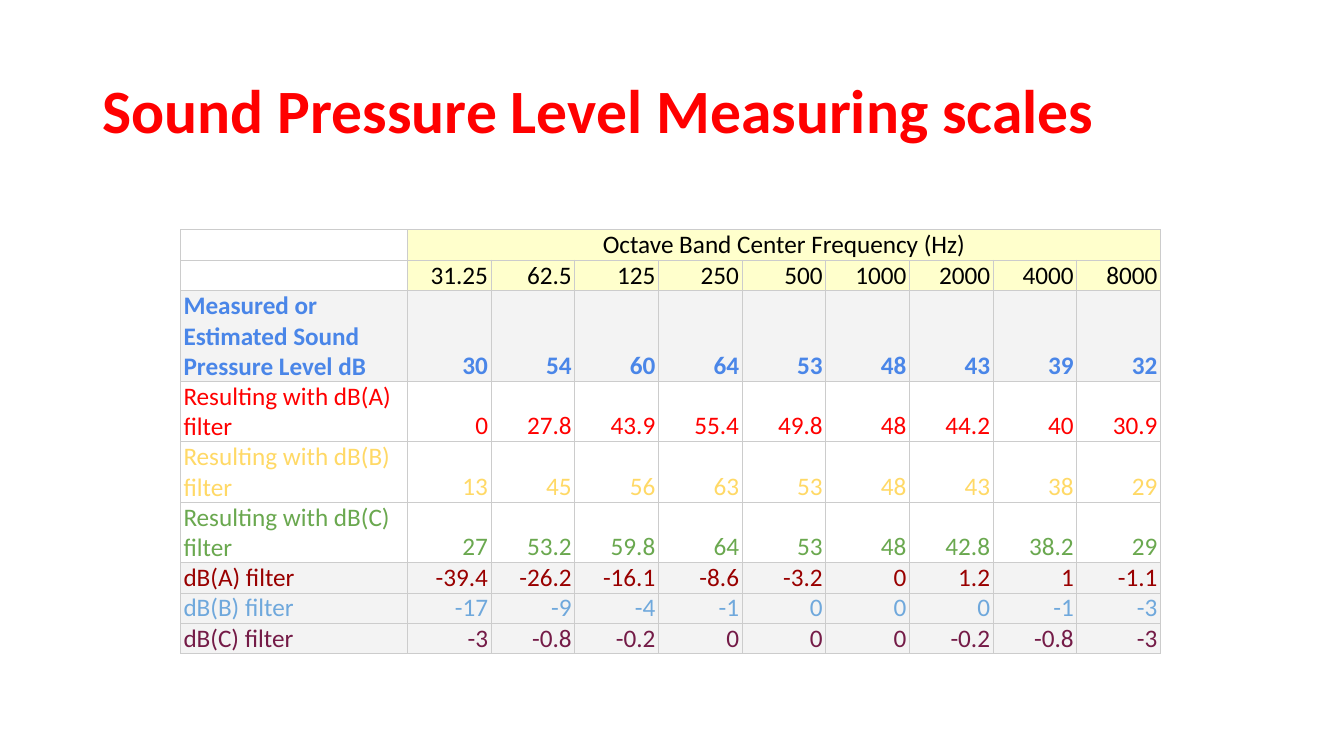
from lxml import etree
from pptx import Presentation
from pptx.dml.color import RGBColor
from pptx.enum.text import MSO_ANCHOR, PP_ALIGN
from pptx.oxml.ns import qn
from pptx.util import Inches, Pt

LEFT, CENTER, RIGHT = PP_ALIGN.LEFT, PP_ALIGN.CENTER, PP_ALIGN.RIGHT
MIDDLE, BOTTOM = MSO_ANCHOR.MIDDLE, MSO_ANCHOR.BOTTOM

COLORS = {
    "black": "000000", "red": "FF0000", "blue": "4A86E8", "yellow": "FFD966",
    "green": "6AA84F", "dark red": "990000", "light blue": "6FA8DC",
    "plum": "741B47", "cream": "FFFFCC", "gray": "F3F3F3", "border": "CCCCCC",
}
LABEL_WIDTH, BAND_WIDTH, LINE_HEIGHT = 2.25, 0.83, 0.3

# label, values, text color, fill, bold, lines of text
ROWS = [
    ("", "Octave Band Center Frequency (Hz)", "black", "cream", False, 1),
    ("", "31.25 62.5 125 250 500 1000 2000 4000 8000", "black", "cream", False, 1),
    ("Measured or Estimated Sound Pressure Level dB",
     "30 54 60 64 53 48 43 39 32", "blue", "gray", True, 3),
    ("Resulting with dB(A) filter",
     "0 27.8 43.9 55.4 49.8 48 44.2 40 30.9", "red", None, False, 2),
    ("Resulting with dB(B) filter",
     "13 45 56 63 53 48 43 38 29", "yellow", None, False, 2),
    ("Resulting with dB(C) filter",
     "27 53.2 59.8 64 53 48 42.8 38.2 29", "green", None, False, 2),
    ("dB(A) filter", "-39.4 -26.2 -16.1 -8.6 -3.2 0 1.2 1 -1.1",
     "dark red", "gray", False, 1),
    ("dB(B) filter", "-17 -9 -4 -1 0 0 0 -1 -3", "light blue", "gray", False, 1),
    ("dB(C) filter", "-3 -0.8 -0.2 0 0 0 -0.2 -0.8 -3", "plum", "gray", False, 1),
]


def write(frame, text, size, color, bold=False, align=LEFT):
    para = frame.paragraphs[0]
    para.alignment = align
    span = para.add_run()
    span.text = text
    font_format = {"name": "Calibri", "size": Pt(size), "bold": bold}
    for name, value in font_format.items():
        setattr(span.font, name, value)
    span.font.color.rgb = RGBColor.from_string(COLORS[color])
    return para


def add_title(page, text):
    box = page.shapes.add_textbox(Inches(0.92), Inches(0.4), Inches(11.5), Inches(1.45))
    box.text_frame.word_wrap = True
    box.text_frame.vertical_anchor = MIDDLE
    write(box.text_frame, text, 44, "red", bold=True).line_spacing = 0.9


def add_borders(cell):
    properties = cell._tc.get_or_add_tcPr()
    for side in ("a:lnL", "a:lnR", "a:lnT", "a:lnB"):
        line = etree.SubElement(properties, qn(side), w=str(Pt(0.75)))
        fill = etree.SubElement(line, qn("a:solidFill"))
        etree.SubElement(fill, qn("a:srgbClr"), val=COLORS["border"])


def style_cell(cell, fill):
    cell_format = {
        "vertical_anchor": BOTTOM, "margin_left": Inches(0.03),
        "margin_right": Inches(0.03), "margin_top": 0, "margin_bottom": 0,
    }
    for name, value in cell_format.items():
        setattr(cell, name, value)
    add_borders(cell)
    if fill:
        cell.fill.solid()
        cell.fill.fore_color.rgb = RGBColor.from_string(COLORS[fill])
    else:
        cell.fill.background()


def add_level_table(page):
    bands = ROWS[1][1].split()
    widths = [LABEL_WIDTH] + [BAND_WIDTH] * len(bands)
    height = LINE_HEIGHT * sum(row[-1] for row in ROWS)
    table = page.shapes.add_table(
        len(ROWS), len(widths), Inches(1.79), Inches(2.28),
        Inches(sum(widths)), Inches(height)).table
    table.first_row = table.horz_banding = False
    for column, width in zip(table.columns, widths):
        column.width = Inches(width)
    table.cell(0, 1).merge(table.cell(0, len(bands)))

    for index, (label, values, color, fill, bold, lines) in enumerate(ROWS):
        row = table.rows[index]
        row.height = Inches(LINE_HEIGHT * lines)
        texts = [label] + ([values] if index == 0 else values.split())
        for position, cell in enumerate(row.cells):
            style_cell(cell, fill if position or label else None)
        for position, text in enumerate(texts):
            align = LEFT if position == 0 else CENTER if index == 0 else RIGHT
            if text:
                write(table.cell(index, position).text_frame, text, 18, color, bold, align)


def main():
    deck = Presentation()
    deck.slide_width, deck.slide_height = Inches(13.33), Inches(7.5)
    page = deck.slides.add_slide(deck.slide_layouts[6])
    add_title(page, "Sound Pressure Level Measuring scales")
    add_level_table(page)
    deck.save("out.pptx")


if __name__ == "__main__":
    main()
